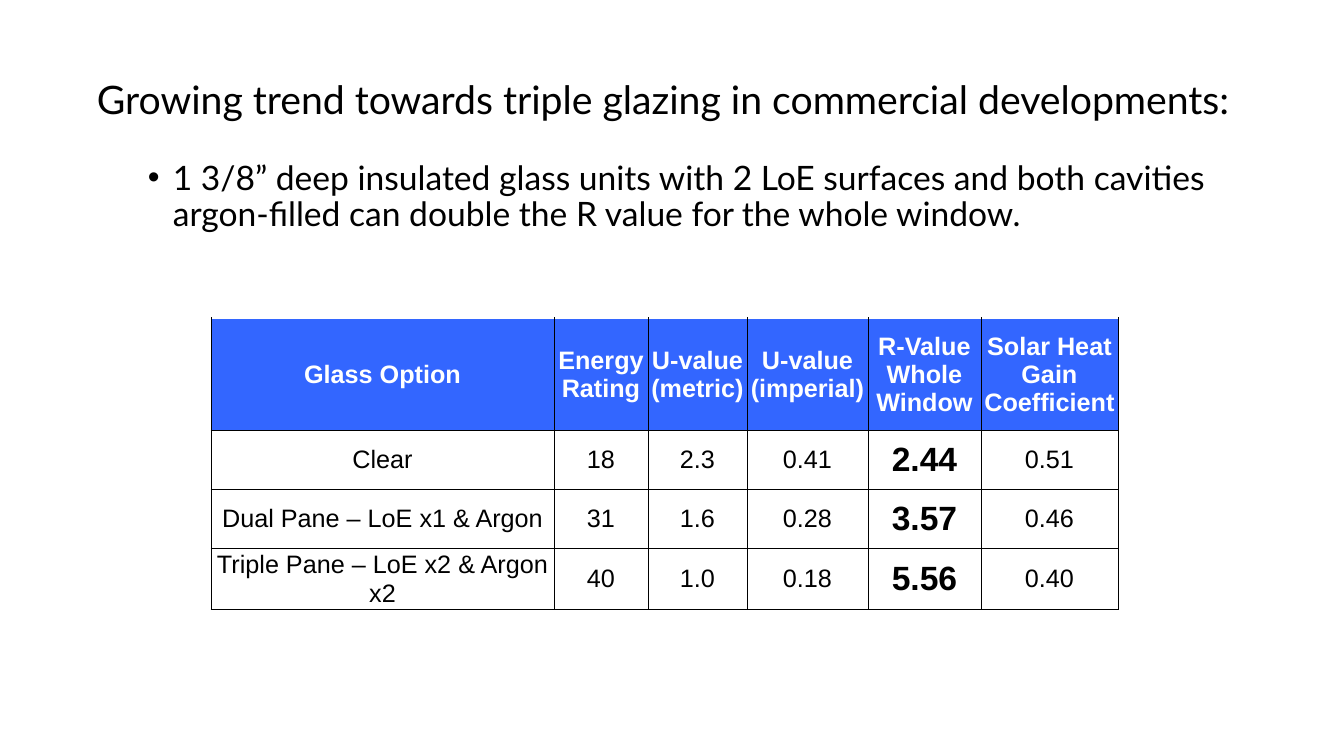
"""Build a slide on triple glazing with a table of glass options."""
from dataclasses import dataclass

from lxml import etree
from pptx import Presentation
from pptx.dml.color import RGBColor
from pptx.enum.text import MSO_ANCHOR, PP_ALIGN
from pptx.oxml.ns import qn
from pptx.util import Emu, Pt

MIDDLE = MSO_ANCHOR.MIDDLE
CENTER = PP_ALIGN.CENTER
PX_PER_INCH = 100.8
COLORS = {"text": "000000", "header": "3366FF", "paper": "FFFFFF", "border": "000000"}
BODY_FONT, TABLE_FONT = "Lato", "Arial"
BORDER_WIDTH = Pt(0.5)

TITLE = "Growing trend towards triple glazing in commercial developments:"
POINT = ("1 3/8” deep insulated glass units with 2 LoE surfaces and both cavities "
         "argon-filled can double the R value for the whole window.")


@dataclass(frozen=True)
class Column:
    heading: str
    width: int
    size: int = 18
    bold: bool = False


@dataclass(frozen=True)
class CellStyle:
    size: int
    bold: bool
    color: str
    fill: str
    borders: tuple[str, ...]


COLUMNS = (
    Column("Glass Option", 343),
    Column("Energy Rating", 94),
    Column("U-value (metric)", 99),
    Column("U-value (imperial)", 121),
    Column("R-Value\nWhole Window", 113, 24, True),
    Column("Solar Heat Gain Coefficient", 137),
)
GLASS_OPTIONS = (
    ("Clear", "18", "2.3", "0.41", "2.44", "0.51"),
    ("Dual Pane – LoE x1 & Argon", "31", "1.6", "0.28", "3.57", "0.46"),
    ("Triple Pane – LoE x2 & Argon x2", "40", "1.0", "0.18", "5.56", "0.40"),
)
HEADER_HEIGHT, ROW_HEIGHT = 112, 59


def px(length: int) -> Emu:
    return Emu(round(length * 914400 / PX_PER_INCH))


def add_run(paragraph, text: str, font: str, size: int, color: str, bold: bool = False) -> None:
    run = paragraph.add_run()
    run.text = text
    run.font.name = font
    run.font.size = Pt(size)
    run.font.bold = bold
    run.font.color.rgb = RGBColor.from_string(COLORS[color])


def add_bullet(paragraph, margin: int, hanging: int) -> None:
    properties = paragraph._p.get_or_add_pPr()
    properties.set("marL", str(px(margin)))
    properties.set("indent", str(-px(hanging)))
    etree.SubElement(properties, qn("a:buFont")).set("typeface", "Arial")
    etree.SubElement(properties, qn("a:buChar")).set("char", "•")


def add_message(slide) -> None:
    frame = slide.shapes.add_textbox(px(87), px(76), px(1159), px(506)).text_frame
    frame.word_wrap = True
    title = frame.paragraphs[0]
    title.line_spacing = 0.9
    add_run(title, TITLE, BODY_FONT, 28, "text")
    point = frame.add_paragraph()
    add_bullet(point, 76, 25)
    point.line_spacing = 0.9
    point.space_before = Pt(27)
    add_run(point, POINT, BODY_FONT, 24, "text")


def add_border(cell, side: str) -> None:
    line = etree.SubElement(cell._tc.get_or_add_tcPr(), qn(f"a:ln{side}"), w=str(BORDER_WIDTH))
    fill = etree.SubElement(line, qn("a:solidFill"))
    etree.SubElement(fill, qn("a:srgbClr")).set("val", COLORS["border"])


def fill_cell(cell, text: str, style: CellStyle) -> None:
    for side in style.borders:
        add_border(cell, side)
    cell.fill.solid()
    cell.fill.fore_color.rgb = RGBColor.from_string(COLORS[style.fill])
    cell.vertical_anchor = MIDDLE
    cell.margin_left = cell.margin_right = cell.margin_top = px(1)
    cell.margin_bottom = 0
    frame = cell.text_frame
    for index, line in enumerate(text.split("\n")):
        paragraph = frame.add_paragraph() if index else frame.paragraphs[0]
        paragraph.alignment = CENTER
        add_run(paragraph, line, TABLE_FONT, style.size, style.color, style.bold)


def add_glass_table(slide) -> None:
    width = sum(column.width for column in COLUMNS)
    height = HEADER_HEIGHT + ROW_HEIGHT * len(GLASS_OPTIONS)
    table = slide.shapes.add_table(len(GLASS_OPTIONS) + 1, len(COLUMNS),
                                   px(211), px(318), px(width), px(height)).table
    table.first_row = table.horz_banding = False
    for row_index, row in enumerate(table.rows):
        row.height = px(ROW_HEIGHT if row_index else HEADER_HEIGHT)
    header_style = CellStyle(18, True, "paper", "header", ("L", "R", "B"))
    for column_index, column in enumerate(COLUMNS):
        table.columns[column_index].width = px(column.width)
        fill_cell(table.cell(0, column_index), column.heading, header_style)
        value_style = CellStyle(column.size, column.bold, "text", "paper", ("L", "R", "T", "B"))
        for row_index, option in enumerate(GLASS_OPTIONS, start=1):
            fill_cell(table.cell(row_index, column_index), option[column_index], value_style)


def main() -> None:
    presentation = Presentation()
    presentation.slide_width, presentation.slide_height = px(1344), px(756)
    slide = presentation.slides.add_slide(presentation.slide_layouts[6])
    add_message(slide)
    add_glass_table(slide)
    presentation.save("out.pptx")


if __name__ == "__main__":
    main()
